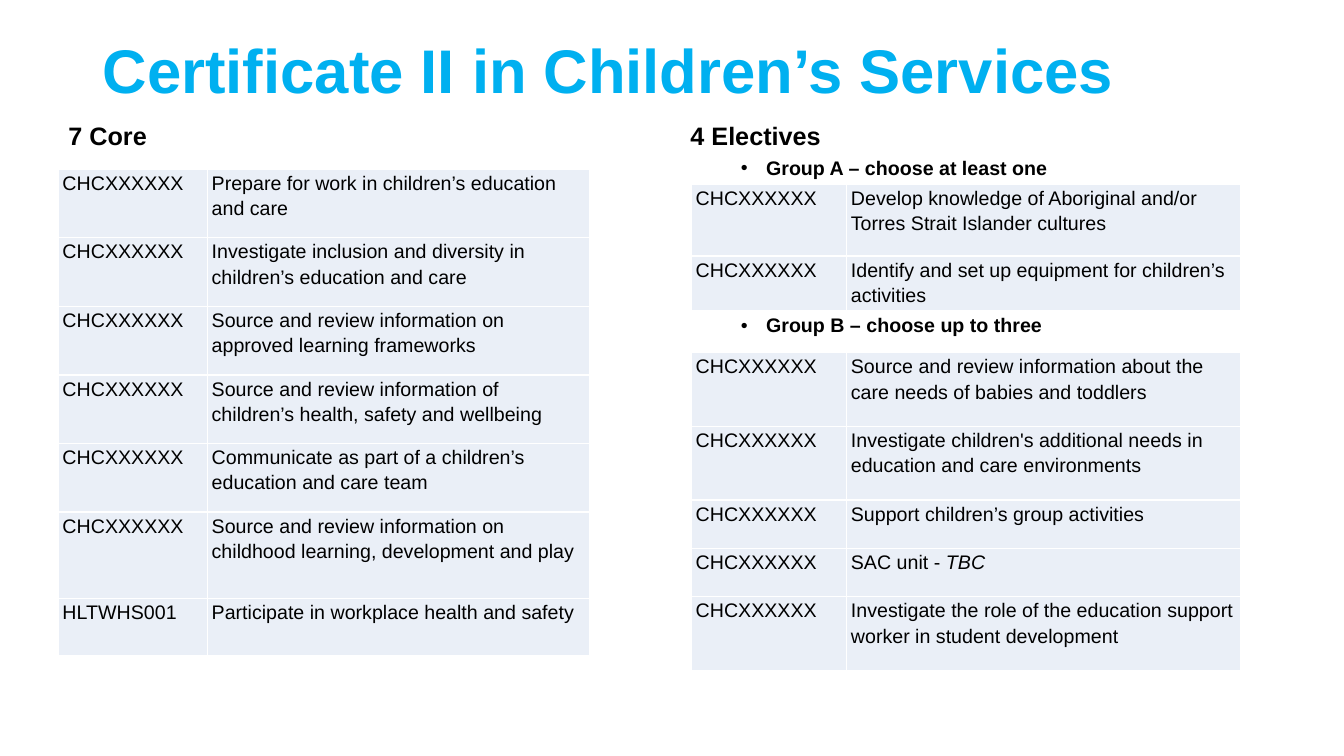
import pptx
import pptx.dml.color
import pptx.enum.text
import pptx.oxml
import pptx.oxml.ns
import pptx.util
from pptx.util import Inches

FONT = "Arial"
UNIT = "CHCXXXXXX"
NAMESPACE = pptx.oxml.ns.nsdecls("a")

CORE_UNITS = [
    (0.68, UNIT, "Prepare for work in children’s education and care"),
    (0.68, UNIT, "Investigate inclusion and diversity in children’s education and care"),
    (0.68, UNIT, "Source and review information on approved learning frameworks"),
    (0.68, UNIT, "Source and review information of children’s health, safety and wellbeing"),
    (0.68, UNIT, "Communicate as part of a children’s education and care team"),
    (0.86, UNIT, "Source and review information on childhood learning, development and play"),
    (0.56, "HLTWHS001", "Participate in workplace health and safety"),
]
GROUP_A_UNITS = [
    (0.71, UNIT, "Develop knowledge of Aboriginal and/or Torres Strait Islander cultures"),
    (0.48, UNIT, "Identify and set up equipment for children’s activities"),
]
GROUP_B_UNITS = [
    (0.73, UNIT, "Source and review information about the care needs of babies and toddlers"),
    (0.73, UNIT, "Investigate children's additional needs in education and care environments"),
    (0.48, UNIT, "Support children’s group activities"),
    (0.48, UNIT, "SAC unit - ", "TBC"),
    (0.73, UNIT, "Investigate the role of the education support worker in student development"),
]


def colour(value):
    return pptx.dml.color.RGBColor.from_string(value)


def add_span(para, text, size, shade="000000", bold=False, italic=False):
    span = para.add_run()
    span.text = text
    span.font.name = FONT
    span.font.size = pptx.util.Pt(size)
    span.font.bold = bold
    span.font.italic = italic
    span.font.color.rgb = colour(shade)


def add_text_frame(page, left, top, width, height):
    box = page.shapes.add_textbox(Inches(left), Inches(top), Inches(width), Inches(height))
    box.text_frame.word_wrap = True
    return box.text_frame


def add_title(page, left, top, width, height):
    frame = add_text_frame(page, left, top, width, height)
    frame.vertical_anchor = pptx.enum.text.MSO_ANCHOR.MIDDLE
    para = frame.paragraphs[0]
    para.line_spacing = 0.9
    add_span(para, "Certificate II in Children’s Services", 44, "00B0F0", bold=True)


def add_headings(page, left, top, width, height, heading, groups=()):
    """Heading, then bulleted group names, each with its space before in points."""
    frame = add_text_frame(page, left, top, width, height)
    para = frame.paragraphs[0]
    para.line_spacing = 0.9
    add_span(para, heading, 18, bold=True)
    for space, group in groups:
        para = frame.add_paragraph()
        properties = para._p.get_or_add_pPr()
        properties.set("marL", str(Inches(0.75)))
        properties.set("indent", str(Inches(-0.25)))
        for element in ('<a:buFont %s typeface="Arial"/>', '<a:buChar %s char="•"/>'):
            properties.append(pptx.oxml.parse_xml(element % NAMESPACE))
        para.line_spacing = 0.9
        para.space_before = pptx.util.Pt(space)
        add_span(para, group, 14, bold=True)


def style_cell(cell):
    cell.margin_left = cell.margin_right = Inches(0.04)
    cell.margin_top = cell.margin_bottom = 0
    cell.fill.solid()
    cell.fill.fore_color.rgb = colour("EAEFF7")
    properties = cell._tc.get_or_add_tcPr()
    for index, side in enumerate("LRTB"):
        properties.insert(index, pptx.oxml.parse_xml(
            f'<a:ln{side} {NAMESPACE} w="12700"><a:solidFill>'
            f'<a:srgbClr val="FFFFFF"/></a:solidFill></a:ln{side}>'))


def add_unit_table(page, left, top, widths, units):
    height = sum(unit[0] for unit in units)
    table = page.shapes.add_table(len(units), 2, Inches(left), Inches(top),
                                  Inches(sum(widths)), Inches(height)).table
    table.first_row = table.horz_banding = False
    for column, width in zip(table.columns, widths):
        column.width = Inches(width)
    for row, (row_height, code, name, *status) in zip(table.rows, units):
        row.height = Inches(row_height)
        for cell, text in zip(row.cells, (code, name)):
            style_cell(cell)
            para = cell.text_frame.paragraphs[0]
            para.line_spacing = 1.15
            add_span(para, text, 14)
        for text in status:
            add_span(para, text, 14, italic=True)


def add_core(page, left, top):
    add_headings(page, left, top, 6.01, 4.64, "7 Core")
    add_unit_table(page, left, top + 0.5, (1.48, 3.79), CORE_UNITS)


def add_electives(page, left, top):
    # Space before Group B leaves room for the Group A table
    add_headings(page, left, top, 5.67, 4.64, "4 Electives",
                 [(5, "Group A – choose at least one"), (97.5, "Group B – choose up to three")])
    for offset, units in ((0.65, GROUP_A_UNITS), (2.32, GROUP_B_UNITS)):
        add_unit_table(page, left + 0.11, top + offset, (1.54, 3.9), units)


def main():
    deck = pptx.Presentation()
    deck.slide_width = Inches(13.33)
    deck.slide_height = Inches(7.5)
    page = deck.slides.add_slide(deck.slide_layouts[6])
    add_title(page, 0.92, 0, 11.5, 1.45)
    add_core(page, 0.58, 1.18)
    add_electives(page, 6.75, 1.18)
    deck.save("out.pptx")


if __name__ == "__main__":
    main()
